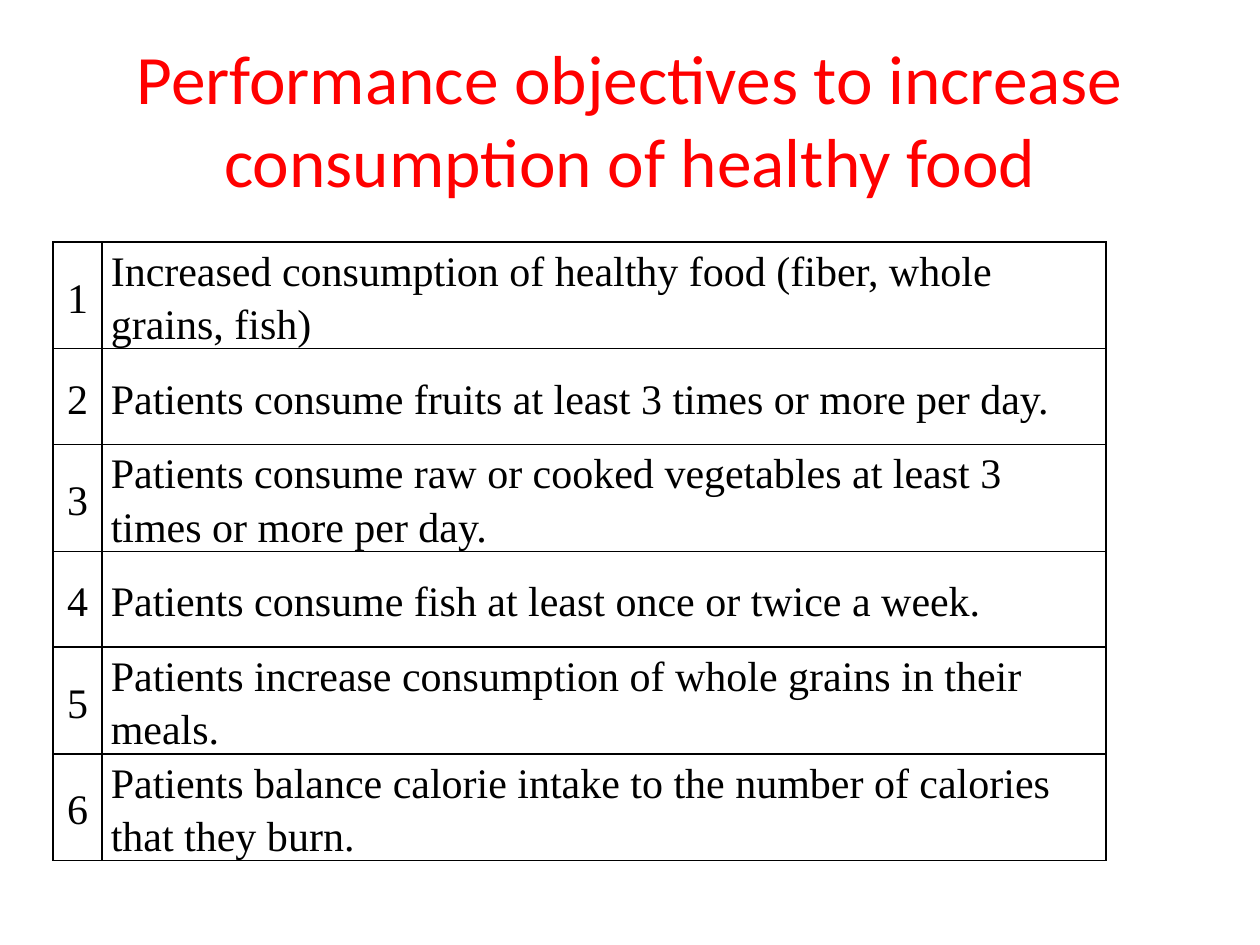
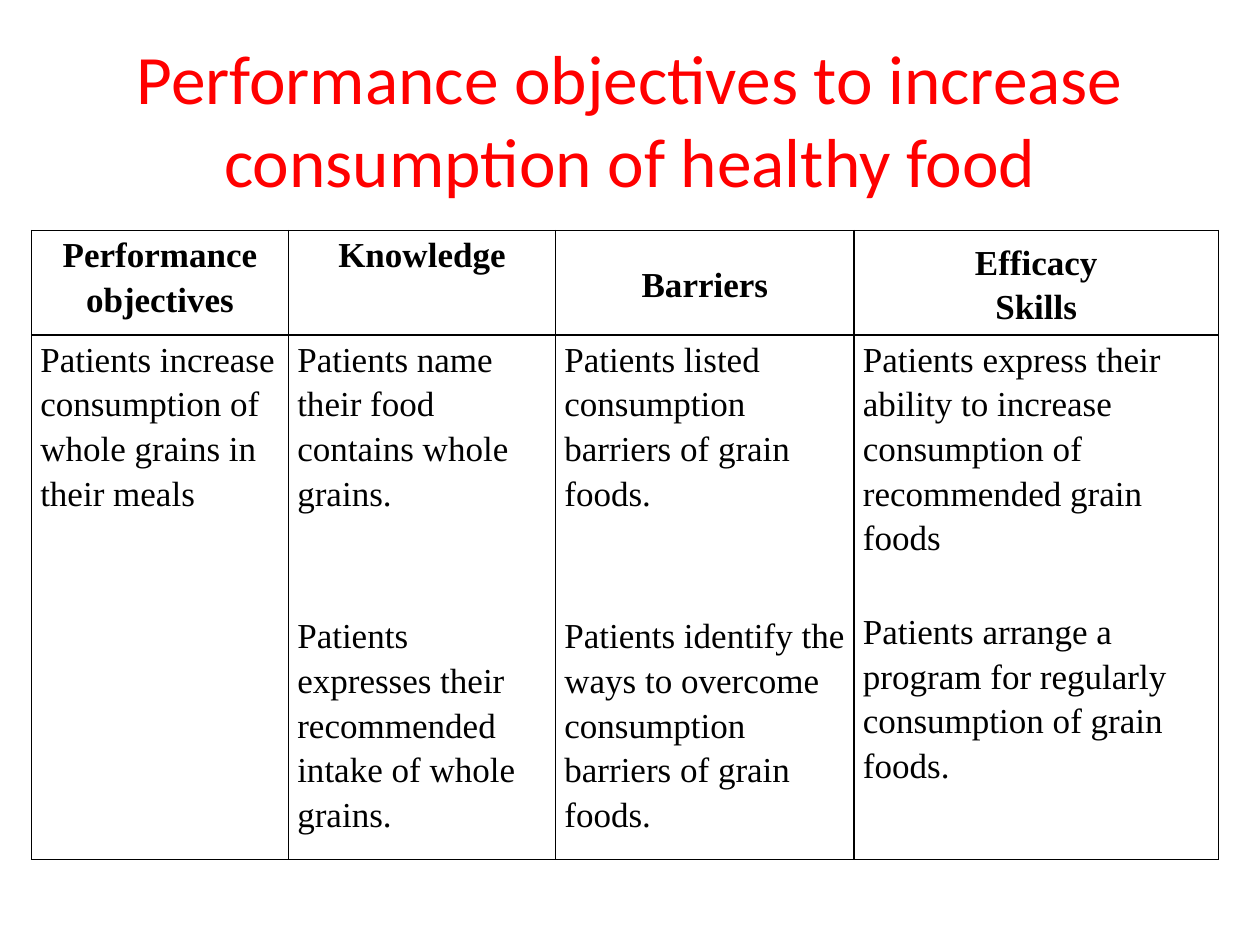
from dataclasses import dataclass

import pptx
import pptx.dml.color
import pptx.enum.text
import pptx.oxml
import pptx.oxml.ns
import pptx.util

Inches = pptx.util.Inches
Pt = pptx.util.Pt
Align = pptx.enum.text.PP_ALIGN
Anchor = pptx.enum.text.MSO_ANCHOR

COLORS = {"background": "FFFFFF", "title": "FF0000", "text": "000000", "border": "000000"}
TITLE_FONT, TABLE_FONT = "Calibri", "Times New Roman"
TITLE = "Performance objectives to increase consumption of healthy food"


@dataclass(frozen=True)
class CellText:
    paragraphs: tuple[str, ...]
    align: Align = Align.LEFT
    anchor: Anchor = Anchor.TOP
    bold: bool = False
    gap: float = 0  # points between paragraphs


@dataclass(frozen=True)
class Grid:
    left: float
    top: float
    column_widths: tuple[float, ...]
    row_heights: tuple[float, ...]
    font_size: float
    rows: list[list[CellText]]


def rgb(name: str) -> pptx.dml.color.RGBColor:
    return pptx.dml.color.RGBColor.from_string(COLORS[name])


def add_titled_slide(deck):
    slide = deck.slides.add_slide(deck.slide_layouts[5])
    title = slide.shapes.title
    title.left, title.top = Inches(0), Inches(0)
    title.width, title.height = deck.slide_width, Inches(1.83)
    title.fill.solid()
    title.fill.fore_color.rgb = rgb("background")
    frame = title.text_frame
    frame.text = TITLE
    frame.word_wrap = True
    frame.auto_size = pptx.enum.text.MSO_AUTO_SIZE.NONE
    frame.vertical_anchor = Anchor.MIDDLE
    frame.margin_bottom = Inches(0)
    paragraph = frame.paragraphs[0]
    paragraph.alignment = Align.CENTER
    paragraph.font.name = TITLE_FONT
    paragraph.font.size = Pt(39.6)
    paragraph.font.color.rgb = rgb("title")
    return slide


def add_borders(cell) -> None:
    properties = cell._tc.get_or_add_tcPr()
    for position, side in enumerate("LRTB"):
        properties.insert(position, pptx.oxml.parse_xml(
            f'<a:ln{side} {pptx.oxml.ns.nsdecls("a")} w="{Pt(1)}"><a:solidFill>'
            f'<a:srgbClr val="{COLORS["border"]}"/></a:solidFill></a:ln{side}>'))


def fill_cell(cell, content: CellText, font_size: float) -> None:
    cell.fill.background()
    add_borders(cell)
    cell.margin_left = cell.margin_right = Inches(0.07)
    cell.margin_top = cell.margin_bottom = Inches(0)
    cell.vertical_anchor = content.anchor
    cell.text_frame.text = "\n".join(content.paragraphs)
    for index, paragraph in enumerate(cell.text_frame.paragraphs):
        paragraph.alignment = content.align
        paragraph.line_spacing = 1.15
        if index and content.gap:
            paragraph.space_before = Pt(content.gap)
        paragraph.font.name = TABLE_FONT
        paragraph.font.size = Pt(font_size)
        paragraph.font.bold = content.bold
        paragraph.font.color.rgb = rgb("text")


def add_grid(slide, grid: Grid) -> None:
    table = slide.shapes.add_table(
        len(grid.row_heights), len(grid.column_widths), Inches(grid.left), Inches(grid.top),
        Inches(sum(grid.column_widths)), Inches(sum(grid.row_heights))).table
    table.first_row = table.horz_banding = False
    for column, width in zip(table.columns, grid.column_widths):
        column.width = Inches(width)
    for row, height, contents in zip(table.rows, grid.row_heights, grid.rows):
        row.height = Inches(height)
        for cell, content in zip(row.cells, contents):
            fill_cell(cell, content, grid.font_size)


def header(*lines: str, anchor: Anchor = Anchor.TOP) -> CellText:
    return CellText(lines, Align.CENTER, anchor, bold=True)


# Numbered list of objectives
OBJECTIVES = [
    "Increased consumption of healthy food (fiber, whole grains, fish)",
    "Patients consume fruits at least 3 times or more per day.",
    "Patients consume raw or cooked vegetables at least 3 times or more per day.",
    "Patients consume fish at least once or twice a week.",
    "Patients increase consumption of whole grains in their meals.",
    "Patients balance calorie intake to the number of calories that they burn.",
]
OBJECTIVES_GRID = Grid(
    0.42, 1.92, (0.39, 7.97), (0.76,) * len(OBJECTIVES), 24,
    [[CellText((str(number),), Align.CENTER, Anchor.MIDDLE),
      CellText((objective,), anchor=Anchor.MIDDLE)]
     for number, objective in enumerate(OBJECTIVES, 1)])

# Determinants of the whole-grain objective
DETERMINANTS_GRID = Grid(
    0.25, 1.83, (2.04, 2.12, 2.37, 2.89), (0.83, 4.16), 20,
    [[header("Performance", "objectives"),
      header("Knowledge"),
      header("Barriers", anchor=Anchor.MIDDLE),
      header("Efficacy", "Skills", anchor=Anchor.MIDDLE)],
     [CellText(("Patients increase consumption of whole grains in their meals",)),
      CellText(("Patients name their food contains whole grains.",
                "Patients expresses their recommended intake of whole grains."), gap=56),
      CellText(("Patients listed consumption barriers of grain foods.",
                "Patients identify the ways to overcome consumption barriers of grain foods."),
               gap=56),
      CellText(("Patients express their ability to increase consumption of recommended "
                "grain foods",
                "Patients arrange a program for regularly consumption of grain foods."),
               gap=28)]])


def main() -> None:
    deck = pptx.Presentation()
    deck.slide_width, deck.slide_height = Inches(10), Inches(7.5)
    for grid in (OBJECTIVES_GRID, DETERMINANTS_GRID):
        add_grid(add_titled_slide(deck), grid)
    deck.save("out.pptx")


if __name__ == "__main__":
    main()
